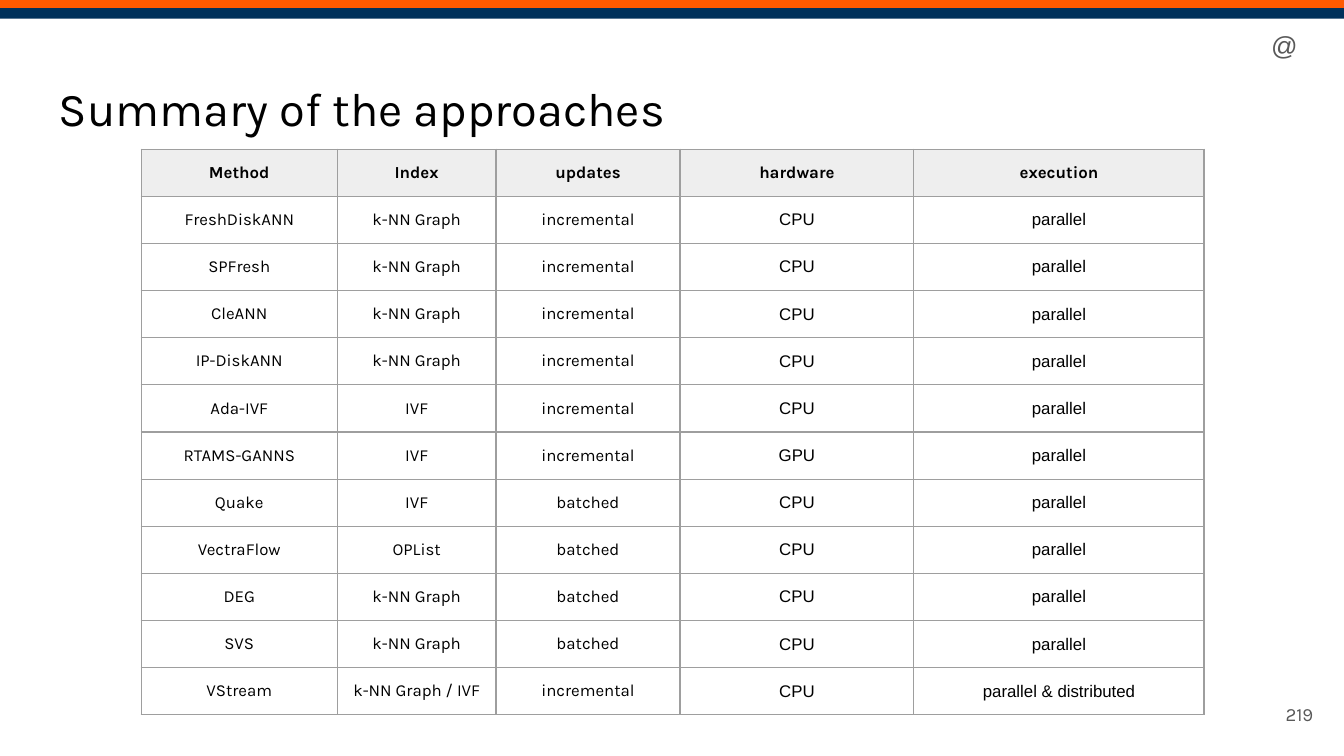
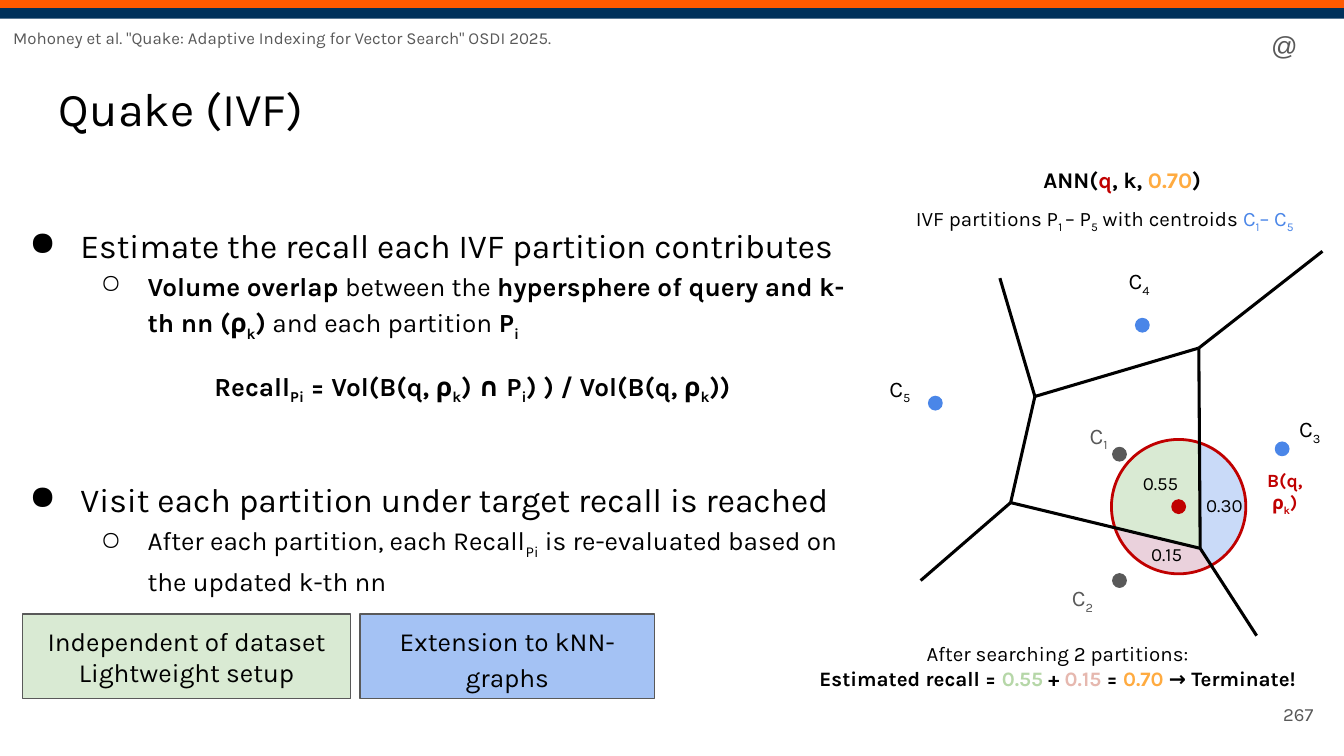
import math

import pptx
import pptx.dml.color
import pptx.enum.shapes
import pptx.enum.text
import pptx.oxml.ns
import pptx.util
from lxml import etree

COLORS = {
    "orange": "FF5A00", "navy": "00315B", "black": "000000", "gray": "595959",
    "border": "9E9E9E", "header": "EEEEEE", "red": "C00000", "blue": "4A86E8",
    "amber": "FFAB40", "green_text": "B6D7A8", "pink_text": "E6B8AF",
    "green": "D9EAD3", "pink": "EAD1DC", "pale_blue": "C9DAF8", "box_blue": "A4C2F4",
}
COLUMNS, ROWS = 100, 56.25  # grid of the slide
ALIGN = pptx.enum.text.PP_ALIGN
ANCHOR = pptx.enum.text.MSO_ANCHOR
SHAPE = pptx.enum.shapes.MSO_SHAPE
BOLD = {"bold": True}
SUB = {"baseline": -25000}
BOLD_SUB = BOLD | SUB


def colored(name, **style):
    return {"color": name, **style}


def add_xml(parent, tag, **attributes):
    element = etree.SubElement(parent, pptx.oxml.ns.qn(tag))
    for name, value in attributes.items():
        element.set(name, str(value))
    return element


class Deck:
    """Holds the shared style and the current slide."""

    base = {"name": "Karla", "size": 12, "bold": False, "color": "black"}

    def __init__(self):
        self.presentation = pptx.Presentation()
        self.presentation.slide_width = pptx.util.Inches(10)
        self.presentation.slide_height = pptx.util.Inches(5.625)
        self.slide = None

    def x(self, columns):
        return round(self.presentation.slide_width * columns / COLUMNS)

    def y(self, rows):
        return round(self.presentation.slide_height * rows / ROWS)

    def place(self, box):
        left, top, width, height = box
        return self.x(left), self.y(top), self.x(width), self.y(height)

    @staticmethod
    def rgb(name):
        return pptx.dml.color.RGBColor.from_string(COLORS[name])

    def new_slide(self, title, number):
        self.slide = self.presentation.slides.add_slide(self.presentation.slide_layouts[6])
        self.shape(SHAPE.RECTANGLE, (0, 0, 100, 0.7), "orange")
        self.shape(SHAPE.RECTANGLE, (0, 0.6, 100, 0.8), "navy")
        self.text((93.6, 1.2, 3.8, 4.4), ["@"], name="Arial", size=14, color="gray")
        self.text((3.4, 4.9, 93.2, 6.3), [title], size=25.2)
        self.text((92.7, 51, 6, 4.3), [number], ALIGN.RIGHT, ANCHOR.MIDDLE,
                  size=10, color="gray")

    def paint(self, shape, fill=None, line=None, width=0.75):
        shape.shadow.inherit = False
        if fill:
            shape.fill.solid()
            shape.fill.fore_color.rgb = self.rgb(fill)
        else:
            shape.fill.background()
        if line:
            shape.line.color.rgb = self.rgb(line)
            shape.line.width = pptx.util.Pt(width)
        else:
            shape.line.fill.background()

    def shape(self, kind, box, fill=None, line=None, width=0.75):
        shape = self.slide.shapes.add_shape(kind, *self.place(box))
        self.paint(shape, fill, line, width)
        return shape

    def dot(self, left, top, color):
        self.shape(SHAPE.OVAL, (left, top, 1, 1), color, color)

    def region(self, points, fill):
        points = [(self.x(column), self.y(row)) for column, row in points]
        builder = self.slide.shapes.build_freeform(*points[0], scale=1.0)
        builder.add_line_segments(points[1:], close=True)
        self.paint(builder.convert_to_shape(), fill)

    def line(self, start, end):
        connector = self.slide.shapes.add_connector(
            pptx.enum.shapes.MSO_CONNECTOR.STRAIGHT,
            self.x(start[0]), self.y(start[1]), self.x(end[0]), self.y(end[1]))
        connector.line.color.rgb = self.rgb("black")
        connector.line.width = pptx.util.Pt(1.63)
        add_xml(connector._element.spPr, "a:effectLst")

    def add_runs(self, paragraph, runs, align=None, **style):
        """A run is a string or a (string, style) pair; a newline is a line break."""
        paragraph.alignment = align
        for item in runs:
            words, extra = (item, {}) if isinstance(item, str) else item
            if words == "\n":
                paragraph.add_line_break()
                continue
            run = paragraph.add_run()
            run.text = words
            values = self.base | style | extra
            run.font.color.rgb = self.rgb(values.pop("color"))
            values["size"] = pptx.util.Pt(values["size"])
            if "baseline" in values:
                run._r.get_or_add_rPr().set("baseline", str(values.pop("baseline")))
            for name, value in values.items():
                setattr(run.font, name, value)

    def frame(self, frame, anchor):
        settings = {"word_wrap": True, "vertical_anchor": anchor}
        settings |= {f"margin_{side}": self.x(1) for side in ("left", "right", "top", "bottom")}
        for name, value in settings.items():
            setattr(frame, name, value)

    def text(self, box, runs, align=None, anchor=ANCHOR.TOP, **style):
        frame = self.slide.shapes.add_textbox(*self.place(box)).text_frame
        self.frame(frame, anchor)
        self.add_runs(frame.paragraphs[0], runs, align, **style)

    def center(self, box, runs, anchor=ANCHOR.MIDDLE, **style):
        self.text(box, runs, ALIGN.CENTER, anchor, **style)

    def callout(self, box, fill, lines, spacing=1.0):
        frame = self.shape(SHAPE.RECTANGLE, box, fill, "gray").text_frame
        self.frame(frame, ANCHOR.MIDDLE)
        for index, line in enumerate(lines):
            paragraph = frame.add_paragraph() if index else frame.paragraphs[0]
            paragraph.line_spacing = spacing
            self.add_runs(paragraph, [line], ALIGN.CENTER, size=14)

    def outline(self, box, paragraphs):
        """Each paragraph is (kind, points before, runs)."""
        kinds = {  # level, left indent, first line, bullet, size, alignment
            "point": (0, 5, -3.8, "●", 18, ALIGN.LEFT),
            "detail": (1, 10, -3.5, "○", 14, ALIGN.LEFT),
            "formula": (0, 0, 5, None, 14, ALIGN.CENTER),
        }
        frame = self.slide.shapes.add_textbox(*self.place(box)).text_frame
        self.frame(frame, ANCHOR.TOP)
        for index, (kind, before, runs) in enumerate(paragraphs):
            level, left, first, bullet, size, align = kinds[kind]
            paragraph = frame.add_paragraph() if index else frame.paragraphs[0]
            properties = paragraph._p.get_or_add_pPr()
            properties.set("marL", str(self.x(left)))
            properties.set("indent", str(self.x(first)))
            if bullet:
                color = add_xml(properties, "a:buClr")
                add_xml(color, "a:srgbClr", val=COLORS["black"])
                add_xml(properties, "a:buChar", char=bullet)
            settings = {"level": level, "line_spacing": 1.15,
                        "space_before": pptx.util.Pt(before)}
            for name, value in settings.items():
                setattr(paragraph, name, value)
            self.add_runs(paragraph, runs, align, size=size)

    def cell_border(self, cell):
        properties = cell._tc.get_or_add_tcPr()
        for index, side in enumerate("LRTB"):
            line = add_xml(properties, f"a:ln{side}", w=int(pptx.util.Pt(0.75)))
            add_xml(add_xml(line, "a:solidFill"), "a:srgbClr", val=COLORS["border"])
            properties.insert(index, line)

    def table(self, left, top, widths, heights, rows, arial_from):
        box = self.place((left, top, sum(widths), sum(heights)))
        table = self.slide.shapes.add_table(len(rows), len(widths), *box).table
        table.first_row = table.horz_banding = False
        for column, width in zip(table.columns, widths):
            column.width = self.x(width)
        for row, height in zip(table.rows, heights):
            row.height = self.y(height)
        for row_index, row in enumerate(rows):
            header = row_index == 0
            for column_index, words in enumerate(row):
                cell = table.cell(row_index, column_index)
                cell.vertical_anchor = ANCHOR.TOP if header else ANCHOR.MIDDLE
                for side in ("left", "right", "top", "bottom"):
                    setattr(cell, f"margin_{side}", self.x(1))
                if header:
                    cell.fill.solid()
                    cell.fill.fore_color.rgb = self.rgb("header")
                else:
                    cell.fill.background()
                self.cell_border(cell)
                arial = not header and column_index >= arial_from
                self.add_runs(cell.text_frame.paragraphs[0], [words], ALIGN.CENTER, size=9,
                              bold=header, name="Arial" if arial else "Karla")


def summary_slide(deck):
    deck.new_slide("Summary of the approaches", "219")
    graph, ivf = "k-NN Graph", "IVF"
    methods = [
        ("FreshDiskANN", graph, "incremental"), ("SPFresh", graph, "incremental"),
        ("CleANN", graph, "incremental"), ("IP-DiskANN", graph, "incremental"),
        ("Ada-IVF", ivf, "incremental"), ("RTAMS-GANNS", ivf, "incremental", "GPU"),
        ("Quake", ivf, "batched"), ("VectraFlow", "OPList", "batched"),
        ("DEG", graph, "batched"), ("SVS", graph, "batched"),
        ("VStream", "k-NN Graph / IVF", "incremental", "CPU", "parallel & distributed"),
    ]
    usual = ("CPU", "parallel")
    rows = [("Method", "Index", "updates", "hardware", "execution")]
    rows += [method + usual[len(method) - 3:] for method in methods]
    deck.table(10.5, 11.1, (14.6, 11.8, 13.7, 17.4, 21.6),
               [3.1] + [3.4] * len(methods), rows, arial_from=3)


def quake_diagram(deck):
    # Cell corners and the outer ends of the partition borders
    upper_left, upper_right = (77, 29.5), (89.2, 25.9)
    lower_right, lower_left = (89.3, 40.8), (75.2, 37.4)
    corners = [upper_left, upper_right, lower_right, lower_left]
    outer_ends = [(74.4, 20.7), (98.4, 18.7), (93.5, 47.3), (68.5, 43.2)]

    # Query ball, split by the partition borders
    center_x, center_y, radius = 87.7, 37.7, 5
    for start, end, fill in ((-72, 61, "pale_blue"), (161, 288, "green"), (61, 161, "pink")):
        angles = [math.radians(start + (end - start) * step / 16) for step in range(17)]
        arc = [(center_x + radius * math.cos(angle), center_y + radius * math.sin(angle))
               for angle in angles]
        deck.region([lower_right] + arc, fill)
    deck.shape(SHAPE.OVAL, (center_x - radius, center_y - radius, 2 * radius, 2 * radius),
               line="red", width=1.5)
    for index, corner in enumerate(corners):
        deck.line(corner, corners[(index + 1) % len(corners)])
        deck.line(corner, outer_ends[index])

    # Centroids: dot, label, dot colour, label colour
    centroids = [
        ((82.8, 33.3), (79.7, 30.4), "gray", "gray"),
        ((82.8, 42.7), (78.5, 42.5), "gray", "gray"),
        ((94.9, 32.9), (95.4, 29.9), "blue", "black"),
        ((84.5, 23.7), (82.7, 18.9), "blue", "black"),
        ((69.1, 29.5), (64.9, 26.9), "blue", "black"),
    ]
    for number, (dot, label, dot_color, label_color) in enumerate(centroids, 1):
        deck.dot(*dot, dot_color)
        deck.center((*label, 4.1, 4), ["C", (str(number), SUB)], ANCHOR.TOP, color=label_color)
    deck.dot(center_x - 0.5, center_y - 0.5, "red")

    # Ball label and volume shares
    deck.center((92.2, 35.4, 6.8, 2.5), ["B(q, ρ", ("k", SUB), ")"],
                size=10, bold=True, color="red")
    for left, top, width, share in ((83.4, 40, 6.8, "0.15"), (83.8, 34.7, 5.1, "0.55"),
                                    (87.7, 36.3, 6.8, "0.30")):
        deck.center((left, top, width, 2.5), [share], size=10)


def quake_slide(deck):
    deck.new_slide("Quake (IVF)", "267")
    deck.text((0, 1.3, 76.8, 4.9),
              ['Mohoney et al. "Quake: Adaptive Indexing for Vector Search" OSDI 2025.'],
              size=9, color="gray")

    # Explanation
    deck.outline((0, 15.3, 65.3, 27.7), [
        ("point", 0, ["Estimate the recall each IVF partition contributes"]),
        ("detail", 0, [("Volume overlap", BOLD), " between the ",
                       ("hypersphere of query and k-th nn (ρ", BOLD), ("k", BOLD_SUB),
                       (")", BOLD), " and each partition ", ("P", BOLD), ("i", BOLD_SUB)]),
        ("formula", 12, [("Recall", BOLD), ("Pi", BOLD_SUB), (" = Vol(B(q, ρ", BOLD),
                         ("k", BOLD_SUB), (") ∩ P", BOLD), ("i", BOLD_SUB),
                         (") ) / Vol(B(q, ρ", BOLD), ("k", BOLD_SUB), ("))", BOLD)]),
        ("point", 36, ["Visit each partition under target recall is reached"]),
        ("detail", 0, ["After each partition, each Recall", ("Pi", SUB),
                       " is re-evaluated based on the updated k-th nn"]),
    ])
    deck.callout((1.7, 45.7, 24.4, 6.3), "green",
                 ["Independent of dataset", "Lightweight setup"])
    deck.callout((26.8, 45.7, 21.9, 6.3), "box_blue", ["Extension to kNN-graphs"], 1.15)

    # Diagram with its heading and result
    quake_diagram(deck)
    deck.center((71.1, 12.2, 24.8, 2.3),
                ["ANN(", ("q", colored("red")), ", k, ", ("0.70", colored("amber")), ")"],
                bold=True)
    deck.center((64.9, 14.3, 34.6, 3.3),
                ["IVF partitions P", ("1 ", SUB), "– P", ("5", SUB), " with centroids ",
                 ("C", colored("blue")), ("1", colored("blue", **SUB)),
                 ("– C", colored("blue")), ("5", colored("blue", **SUB))],
                ANCHOR.TOP, size=11)
    deck.center((58.3, 46.7, 40.8, 5.9),
                [("After searching 2 partitions:", {"bold": False}), "\n",
                 "Estimated recall = ", ("0.55", colored("green_text")), " + ",
                 ("0.15 ", colored("pink_text")), "= ", ("0.70", colored("amber")),
                 " → Terminate!"],
                ANCHOR.TOP, size=11, bold=True)


def main():
    deck = Deck()
    summary_slide(deck)
    quake_slide(deck)
    deck.presentation.save("out.pptx")


if __name__ == "__main__":
    main()
